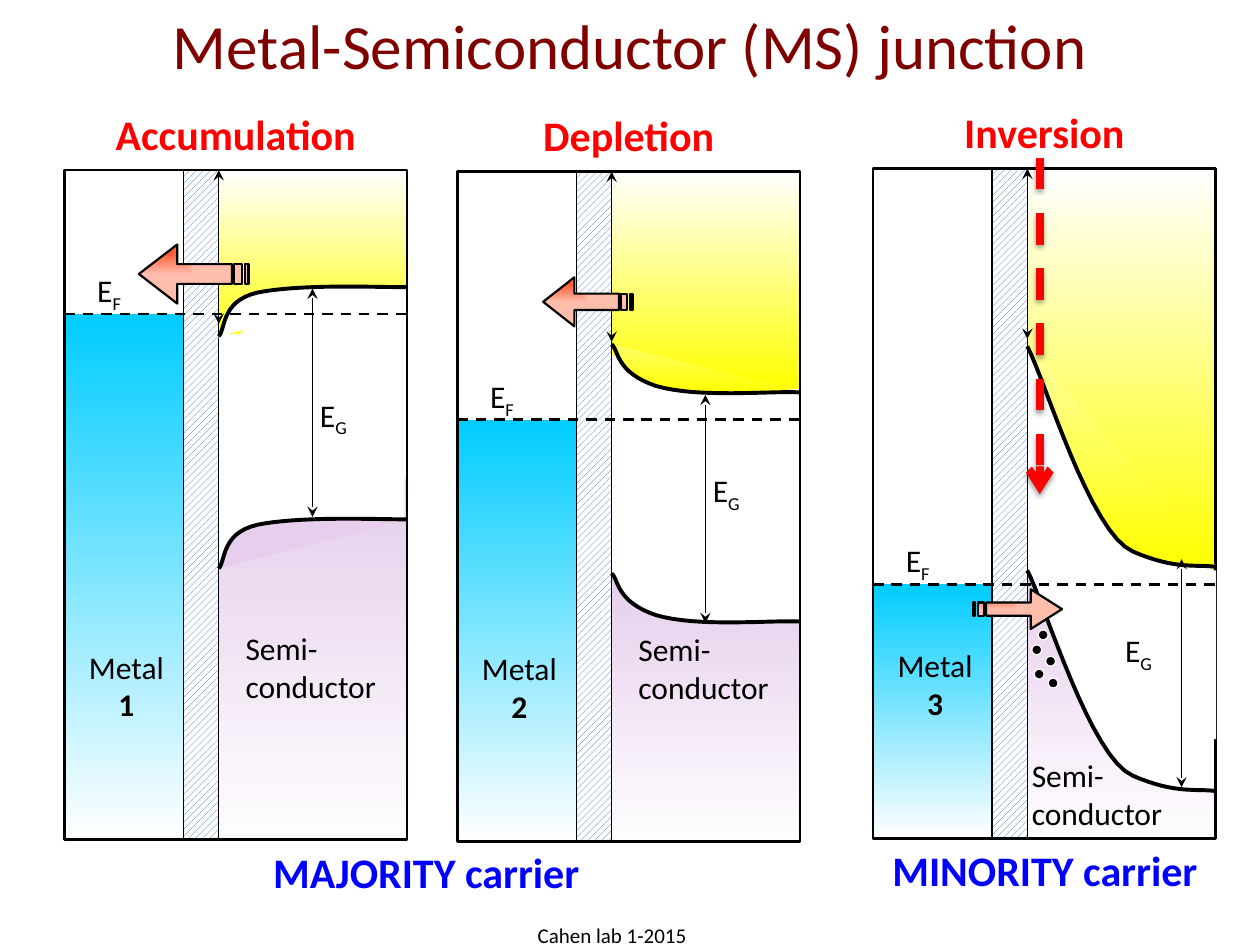
from dataclasses import dataclass

from pptx import Presentation
from pptx import util as u
from pptx.dml.color import RGBColor
from pptx.enum import dml, shapes, text
from pptx.oxml import ns, parse_xml


@dataclass(frozen=True)
class Theme:
    font: str = "Calibri"
    title: str = "800000"
    heading: str = "FF0000"
    carrier: str = "0000FF"
    ink: str = "000000"
    white: str = "FFFFFF"
    lilac: str = "E6CEEC"
    conduction: tuple = ("FFFFFF", "FFFF00")
    valence: tuple = ("E6CEEC", "FEFDFE")
    metal: tuple = ("00CCFF", "FFFFFF")
    flow: tuple = ("FF3300", "FFBDAC")
    hatch: str = "3366CC"
    title_size: int = 36
    heading_size: int = 24
    label_size: int = 18
    footer_size: int = 12


theme = Theme()
presentation = Presentation()
presentation.slide_width, presentation.slide_height = u.Cm(25.4), u.Cm(19.05)
slide = presentation.slides.add_slide(presentation.slide_layouts[5])


def add_text(content, box, shape=None, size=theme.label_size, color=theme.ink, bold=False,
             last_bold=False, subscript="", centered=False, wrap=False):
    left, top, width, height = (u.Cm(value) for value in box)
    if shape is None:
        shape = slide.shapes.add_textbox(left, top, width, height)
    shape.left, shape.top, shape.width, shape.height = left, top, width, height
    frame = shape.text_frame
    frame.word_wrap = wrap
    frame.vertical_anchor = text.MSO_ANCHOR.TOP
    frame.text = content
    if subscript:
        run = frame.paragraphs[-1].add_run()
        run.text = subscript
        run.font._element.set("baseline", "-25000")
    for paragraph in frame.paragraphs:
        paragraph.alignment = text.PP_ALIGN.CENTER if centered else text.PP_ALIGN.LEFT
        for run in paragraph.runs:
            run.font.name, run.font.size = theme.font, u.Pt(size)
            run.font.color.rgb = RGBColor.from_string(color)
            run.font.bold = bold or (last_bold and paragraph.text == frame.paragraphs[-1].text)


def draw(kind, *contours, fill=None, line=None, width=0.75, dash=False, closed=True,
         head=None, tail=None, effect=""):
    contours = [[(u.Cm(x), u.Cm(y)) for x, y in contour] for contour in contours]
    (x1, y1), (x2, y2) = contours[0][0], contours[0][-1]
    if kind == "line":
        shape = slide.shapes.add_connector(shapes.MSO_CONNECTOR.STRAIGHT, x1, y1, x2, y2)
    elif kind == "free":
        builder = slide.shapes.build_freeform(x1, y1)
        for contour in contours:
            builder.move_to(*contour[0])
            builder.add_line_segments(contour[1:], close=closed)
        shape = builder.convert_to_shape()
    else:
        shape = slide.shapes.add_shape(kind, x1, y1, x2 - x1, y2 - y1)
    if kind != "line":
        shape.shadow.inherit = False
        if fill is None:
            shape.fill.background()
        elif fill == theme.hatch:
            shape.fill.patterned()
            shape.fill.pattern = dml.MSO_PATTERN.WIDE_UPWARD_DIAGONAL
            shape.fill.fore_color.rgb = RGBColor.from_string(fill)
            shape.fill.back_color.rgb = RGBColor.from_string(theme.white)
        elif isinstance(fill, tuple):
            shape.fill.gradient()
            shape.fill.gradient_angle = 270
            for stop, color in zip(shape.fill.gradient_stops, fill):
                stop.color.rgb = RGBColor.from_string(color)
            if fill == theme.flow:
                linear = shape._element.spPr.find(".//" + ns.qn("a:lin"))
                linear.getparent().replace(linear, parse_xml(
                    f'<a:path {ns.nsdecls("a")} path="rect">'
                    '<a:fillToRect r="100000" b="100000"/></a:path>'))
        else:
            shape.fill.solid()
            shape.fill.fore_color.rgb = RGBColor.from_string(fill)
    if line is None:
        shape.line.fill.background()
    else:
        shape.line.color.rgb = RGBColor.from_string(line)
        shape.line.width = u.Pt(width)
        if dash:
            shape.line.dash_style = dml.MSO_LINE.DASH
    for end, style in (("headEnd", head), ("tailEnd", tail)):
        if style:
            shape.line._get_or_add_ln().append(
                parse_xml(f'<a:{end} {ns.nsdecls("a")} type="{style}"/>'))
    if kind == "line":
        shape._element.spPr.append(
            parse_xml(f'<a:effectLst {ns.nsdecls("a")}>{effect}</a:effectLst>'))


RECT, OVAL = shapes.MSO_SHAPE.RECTANGLE, shapes.MSO_SHAPE.OVAL
PANEL_WIDTH, PANEL_HEIGHT = 6.91, 13.5
METAL_WIDTH, HATCH_LEFT, INTERFACE = 2.51, 2.4, 3.11
GAP_LENGTH = 4.6

panels = [
    dict(name="Accumulation", name_width=5.41, left=1.3, top=3.43, fermi=2.9, barrier=3.1,
         bend=[(0, 0), (0.15, -0.15), (0.03, -0.79), (0.94, -0.91),
               (1.83, -1.05), (3.2, -0.99), (3.78, -0.99)],
         starts=(3.35, 8.03), bend_fills=(theme.white, theme.lilac),
         conduction=[(0, 3.66), (1.07, 2.69), (3.78, 2.36)],
         valence=[(3.8, 6.2), (1.27, 7.44), (0, 8)],
         gap=(0, 3.3, 3.75, 3.71), gap_arrow=(5, 2.39), gap_label=(4.9, 4.42),
         semi=(3.4, 9.12), flow=(1.5, 1.5, 2.21, 1.19), mirrored=False),
    dict(name="Depletion", name_width=3.99, left=9.22, top=3.46, fermi=5, barrier=3.43,
         bend=[(0, 0), (0.15, 0.13), (0.08, 0.56), (0.89, 0.84),
               (1.73, 1.09), (3.2, 0.94), (3.78, 0.97)],
         starts=(3.48, 8.1), bend_fills=(("FFFF65", "FFFF00"), theme.white),
         conduction=[(0, 3.68), (1.14, 4.22), (3.78, 4.39)],
         valence=[(3.8, 9.04), (0.74, 8.89), (0, 8.03)],
         gap=(0, 4.39, 3.75, 3.71), gap_arrow=(5, 4.5), gap_label=(4.9, 5.92),
         semi=(3.4, 9.12), flow=(1.73, 2.13, 1.8, 0.99), mirrored=False),
    dict(name="Inversion", name_width=3.81, left=17.6, top=3.4, fermi=8.38, barrier=3.43,
         bend=[(0, 0), (0.36, 0.69), (1.27, 3.78), (2.13, 4.14),
               (3, 4.52), (3.45, 4.39), (3.8, 4.45)],
         starts=(3.58, 8.1), bend_fills=(("FFFFA2", "FFFF00"), theme.white),
         conduction=[(0, 3.66), (1.52, 6.2), (3.8, 8.13)],
         valence=[(3.8, 12.47), (1.93, 11.81), (0, 8)],
         gap=(1.6, 8.1, 2.21, 3.4), gap_arrow=(6.22, 7.87), gap_label=(4.83, 9.19),
         semi=(2.95, 11.71), flow=(2.01, 8.48, 1.8, 0.8), mirrored=True),
]

add_text("Metal-Semiconductor (MS) junction", (1.27, 0, 22.86, 3.18), shape=slide.shapes.title,
         size=theme.title_size, color=theme.title, centered=True, wrap=True)
add_text("Cahen lab 1-2015", (10.59, 18.47, 3.53, 0.76), size=theme.footer_size)

for number, panel in enumerate(panels, 1):
    left, top, fermi = panel["left"], panel["top"], panel["top"] + panel["fermi"]
    right, bottom, edge = left + PANEL_WIDTH, top + PANEL_HEIGHT, left + INTERFACE

    upper = [(0, 0)] + panel["conduction"] + [(3.8, 0)]
    lower = [(0, PANEL_HEIGHT), (3.8, PANEL_HEIGHT)] + panel["valence"]
    for outline, fill in ((upper, theme.conduction), (lower, theme.valence)):
        draw("free", [(edge + x, top + y) for x, y in outline], fill=fill)
    draw(RECT, [(left, fermi), (left + METAL_WIDTH, bottom)], fill=theme.metal)
    draw(RECT, [(left + HATCH_LEFT, top), (edge, bottom)], fill=theme.hatch, line=theme.ink)
    draw(RECT, [(left, top), (right, bottom)], line=theme.ink, width=1.5)
    x, y, width, height = panel["gap"]
    draw(RECT, [(edge + x, top + y), (edge + x + width, top + y + height)], fill=theme.white)

    for start, fill in zip(panel["starts"], panel["bend_fills"]):
        curve = [(edge, top + start)]
        for first in (0, 3):
            a, b, c, d = panel["bend"][first:first + 4]
            for step in range(1, 17):
                t = step / 16
                x, y = ((1 - t) ** 3 * a[i] + 3 * t * (1 - t) ** 2 * b[i]
                        + 3 * t ** 2 * (1 - t) * c[i] + t ** 3 * d[i] for i in (0, 1))
                curve.append((edge + x, top + start + y))
        draw("free", curve, fill=fill, line=theme.ink, width=2.25, closed=False)

    draw("line", [(edge, top + 3.4), (edge, bottom)], line=theme.ink)
    draw("line", [(left, fermi), (right, fermi)], line=theme.ink, width=1.5, dash=True)
    x, y = left + panel["gap_arrow"][0], top + panel["gap_arrow"][1]
    for ends in ([(edge, top), (edge, top + panel["barrier"])], [(x, y), (x, y + GAP_LENGTH)]):
        draw("line", ends, line=theme.ink, head="stealth", tail="stealth")

    x, y = panel["gap_label"]
    add_text("E", (left + x, top + y, 1.09, 1.02), subscript="G")
    add_text("E", (left + 0.41, fermi - 0.99, 1.02, 1.02), subscript="F")
    add_text(f"Metal\n{number}", (left + 0.22, top + 9.5, 2.06, 1.8), centered=True, last_bold=True)
    x, y = panel["semi"]
    add_text("Semi-\nconductor", (left + x, top + y, 3.18, 1.8))
    name_left = left + (PANEL_WIDTH - panel["name_width"]) / 2
    add_text(panel["name"], (name_left, top - 1.37, panel["name_width"], 1.27),
             size=theme.heading_size, color=theme.heading, bold=True, centered=True)

    x, y, width, height = panel["flow"]
    arrow = [(0.35, 0), (0.35, 1 / 3), (0.85, 1 / 3), (0.85, 2 / 3), (0.35, 2 / 3), (0.35, 1), (0, 0.5)]
    stripes = [[(a, 1 / 3), (a, 2 / 3), (b, 2 / 3), (b, 1 / 3)] for a, b in ((0.87, 0.94), (0.97, 1))]
    draw("free", *[[(left + x + width * (1 - px if panel["mirrored"] else px), top + y + height * py)
                    for px, py in contour] for contour in [arrow] + stripes],
         fill=theme.flow, line=theme.ink, width=1.25)

for x, y in ((20.93, 12.7), (20.8, 13), (21.08, 13.23), (20.85, 13.49), (21.13, 13.67)):
    draw(OVAL, [(x, y), (x + 0.2, y + 0.2)], fill=theme.ink, line=theme.white)

for content, left, top in (("MAJORITY carrier", 5.23, 16.94), ("MINORITY carrier", 17.7, 16.89)):
    add_text(content, (left, top, 6.73, 1.27), size=theme.heading_size, color=theme.carrier,
             bold=True, centered=True)

draw("line", [(20.96, 3.18), (20.96, 9.96)], line=theme.heading, width=4.5, dash=True, tail="arrow",
     effect='<a:outerShdw blurRad="39370" dist="20320" dir="5400000" rotWithShape="0">'
            '<a:srgbClr val="000000"><a:alpha val="38000"/></a:srgbClr></a:outerShdw>')

presentation.save("out.pptx")
